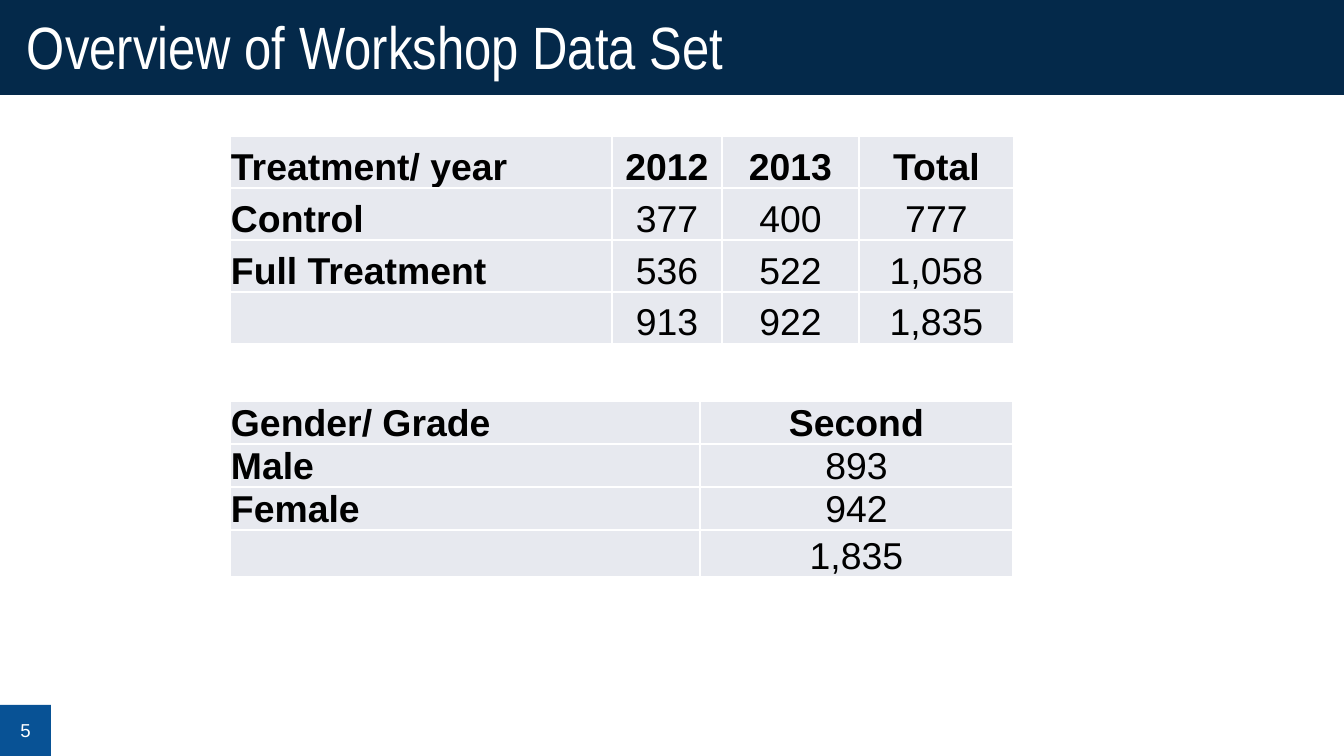
from dataclasses import dataclass

from lxml.etree import SubElement
from pptx import Presentation
from pptx.dml.color import RGBColor
from pptx.enum.shapes import MSO_SHAPE as Shape
from pptx.enum.text import MSO_ANCHOR as Anchor, PP_ALIGN as Align
from pptx.oxml.ns import qn
from pptx.util import Emu, Pt

EMU_PER_PX = 914400 / 134.4
COLORS = {
    "navy": "04294A",
    "blue": "085295",
    "cell": "E7E9EF",
    "white": "FFFFFF",
    "black": "000000",
}


@dataclass
class Bar:
    box: tuple[int, int, int, int]
    fill: str
    text: str
    font: str
    size: int
    align: Align
    inset: int


@dataclass
class Grid:
    left: int
    top: int
    cols: list[int]
    rows: list[int]
    cells: list[list[str]]


def px(n: int) -> Emu:
    return Emu(round(n * EMU_PER_PX))


def rgb(name: str) -> RGBColor:
    return RGBColor.from_string(COLORS[name])


def style(p, font: str, size: int, color: str, align: Align, bold: bool = False) -> None:
    p.alignment = align
    p.font.name, p.font.size, p.font.bold = font, Pt(size), bold
    p.font.color.rgb = rgb(color)


def draw_bar(s, bar: Bar) -> None:
    sp = s.shapes.add_shape(Shape.RECTANGLE, *map(px, bar.box))
    sp.shadow.inherit = False
    sp.fill.solid()
    sp.fill.fore_color.rgb = rgb(bar.fill)
    sp.line.fill.background()
    tf = sp.text_frame
    tf.word_wrap = True
    tf.vertical_anchor = Anchor.MIDDLE
    tf.margin_left = tf.margin_right = px(bar.inset)
    p = tf.paragraphs[0]
    p.text = bar.text
    style(p, bar.font, bar.size, "white", bar.align)


def add_borders(cell) -> None:
    tc_pr = cell._tc.get_or_add_tcPr()
    for i, side in enumerate(("lnL", "lnR", "lnT", "lnB")):
        ln = SubElement(tc_pr, qn(f"a:{side}"), w=str(Pt(1)))
        fill = SubElement(ln, qn("a:solidFill"))
        SubElement(fill, qn("a:srgbClr"), val=COLORS["white"])
        tc_pr.insert(i, ln)  # borders come before the fill


def draw_grid(s, grid: Grid) -> None:
    box = (grid.left, grid.top, sum(grid.cols), sum(grid.rows))
    table = s.shapes.add_table(len(grid.rows), len(grid.cols), *map(px, box)).table
    for col, width in zip(table.columns, grid.cols):
        col.width = px(width)
    for row, height in zip(table.rows, grid.rows):
        row.height = px(height)
    for r, texts in enumerate(grid.cells):
        for c, text in enumerate(texts):
            cell = table.cell(r, c)
            cell.fill.solid()
            cell.fill.fore_color.rgb = rgb("cell")
            cell.vertical_anchor = Anchor.BOTTOM
            cell.margin_left = cell.margin_right = cell.margin_top = px(1)
            cell.margin_bottom = 0
            add_borders(cell)
            p = cell.text_frame.paragraphs[0]
            p.text = text
            align = Align.CENTER if c else Align.LEFT
            style(p, "Arial", 20, "black", align, bold=r == 0 or c == 0)


BARS = [
    Bar((0, -4, 1344, 99), "navy", "Overview of Workshop Data Set",
        "Arial Narrow", 32, Align.LEFT, 27),
    Bar((0, 705, 51, 51), "blue", "5", "Arial", 10, Align.CENTER, 0),
]
GRIDS = [
    Grid(230, 401, [470, 313], [43, 43, 43, 47], [
        ["Gender/ Grade", "Second"],
        ["Male", "893"],
        ["Female", "942"],
        ["", "1,835"],
    ]),
    Grid(230, 136, [382, 110, 137, 155], [52] * 4, [
        ["Treatment/ year", "2012", "2013", "Total"],
        ["Control", "377", "400", "777"],
        ["Full Treatment", "536", "522", "1,058"],
        ["", "913", "922", "1,835"],
    ]),
]


def main() -> None:
    prs = Presentation()
    prs.slide_width, prs.slide_height = px(1344), px(756)
    s = prs.slides.add_slide(prs.slide_layouts[6])

    # Title band and page number
    for bar in BARS:
        draw_bar(s, bar)

    # Data tables
    for grid in GRIDS:
        draw_grid(s, grid)

    prs.save("out.pptx")


if __name__ == "__main__":
    main()
